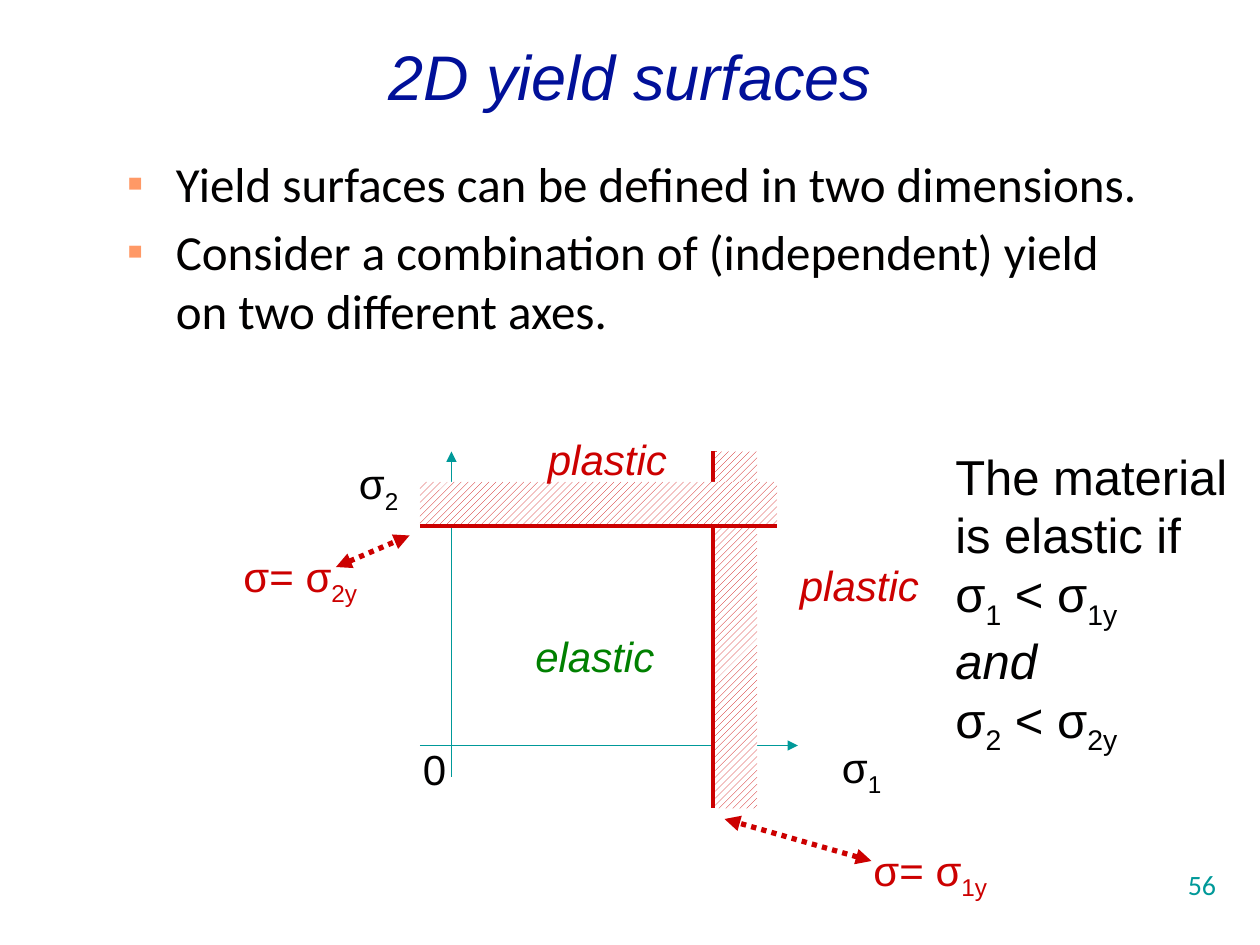
from lxml.etree import SubElement
from pptx import Presentation
from pptx.dml.color import RGBColor
from pptx.enum.dml import MSO_LINE, MSO_PATTERN
from pptx.enum.shapes import MSO_CONNECTOR, MSO_SHAPE
from pptx.enum.text import MSO_ANCHOR, PP_ALIGN
from pptx.oxml.ns import qn
from pptx.util import Inches, Pt

COLS, ROWS = 120, 90  # square cells, twelve to the inch
CELL = Inches(10) / COLS
HUE = {"title": "011099", "ink": "010000", "axis": "009999", "yield": "CC0000",
       "safe": "008000", "bullet": "FF9966", "paper": "FFFFFF"}


def color(name):
    return RGBColor.from_string(HUE[name])


def cells(*nums):
    return [round(n * CELL) for n in nums]


def write(par, runs, size, hue, face="Arial"):
    """Add (text, style) runs; style is "", "sub", "ital" or "break"."""
    for text, style in runs:
        if style == "break":
            par.add_line_break()
            continue
        run = par.add_run()
        run.text = text
        font = run.font
        font.name, font.size = face, Pt(size)
        font.color.rgb = color(hue)
        font.italic = style == "ital"
        if style == "sub":
            run._r.get_or_add_rPr().set("baseline", "-25000")


def text_box(slide, box, wrap=True):
    frame = slide.shapes.add_textbox(*cells(*box)).text_frame
    frame.word_wrap = wrap
    return frame


def label(slide, x, y, width, runs, hue="ink"):
    frame = text_box(slide, (x, y, width, 6))
    write(frame.paragraphs[0], runs, 24, hue)


def line(slide, start, end, hue, width, heads=(), dots=False):
    link = slide.shapes.add_connector(MSO_CONNECTOR.STRAIGHT, *cells(*start, *end))
    link.line.color.rgb = color(hue)
    link.line.width = Pt(width)
    if dots:
        link.line.dash_style = MSO_LINE.ROUND_DOT
    for head in heads:
        SubElement(link.line._get_or_add_ln(), qn(f"a:{head}"), type="triangle")
    SubElement(link._element.spPr, qn("a:effectLst"))


def hatch(slide, *box):
    band = slide.shapes.add_shape(MSO_SHAPE.RECTANGLE, *cells(*box))
    band.shadow.inherit = False
    band.line.fill.background()
    band.fill.patterned()
    band.fill.pattern = MSO_PATTERN.WIDE_UPWARD_DIAGONAL
    band.fill.fore_color.rgb = color("yield")
    band.fill.back_color.rgb = color("paper")


def heading(slide, box):
    title = slide.shapes.title
    title.left, title.top, title.width, title.height = cells(*box)
    frame = title.text_frame
    frame.vertical_anchor = MSO_ANCHOR.MIDDLE
    par = frame.paragraphs[0]
    par.alignment, par.line_spacing = PP_ALIGN.CENTER, 1.2
    write(par, [("2D yield surfaces", "ital")], 36, "title")


def bullets(slide, box, items):
    frame = text_box(slide, box)
    for i, item in enumerate(items):
        par = frame.add_paragraph() if i else frame.paragraphs[0]
        par.space_before = Pt(5.6)
        props = par._p.get_or_add_pPr()
        props.set("marL", str(Inches(0.38)))
        props.set("indent", str(-Inches(0.38)))
        tint = SubElement(props, qn("a:buClr"))
        SubElement(tint, qn("a:srgbClr"), val=HUE["bullet"])
        SubElement(props, qn("a:buSzPct"), val="50000")
        SubElement(props, qn("a:buFont"), typeface="Arial")
        SubElement(props, qn("a:buChar"), char="■")
        write(par, [(item, "")], 28, "ink", "Calibri")


def rule(slide, box):
    """State the condition for elastic behaviour."""
    frame = text_box(slide, box, wrap=False)
    end = ("", "break")

    def limit(axis):
        return [("σ", ""), (axis, "sub"), (" < σ", ""), (axis + "y", "sub")]

    first = [("The material", ""), end, ("is elastic if", ""), end,
             *limit("1"), end, ("and", "ital")]
    write(frame.paragraphs[0], first, 28, "ink")
    write(frame.add_paragraph(), limit("2"), 28, "ink")


def diagram(slide, x, y, side):
    """Draw the yield plot; (x, y) is its top left and side its band length."""
    zero = (x + 3, y + side - 6)
    wall, roof = x + side - 6, y + 7
    band = 4
    line(slide, (zero[0], zero[1] + 3), (zero[0], y), "axis", 0.75, ["tailEnd"])
    line(slide, (x, zero[1]), (x + side + 2, zero[1]), "axis", 0.75, ["tailEnd"])
    label(slide, x - 0.9, zero[1] - 0.8, 6, [("0", "")])
    label(slide, x + side + 5, zero[1] - 1, 8, [("σ", ""), ("1", "sub")])
    label(slide, x - 7, y, 8, [("σ", ""), ("2", "sub")])

    line(slide, (wall, y), (wall, y + side), "yield", 3)
    hatch(slide, wall + 0.1, y, band, side)
    line(slide, (x, roof), (x + side, roof), "yield", 3)
    hatch(slide, x, roof - band - 0.1, side, band)

    for dx, dy, word, hue in [(9.8, 16.5, "elastic", "safe"),
                              (35, 9.7, "plastic", "yield"),
                              (11, -2.3, "plastic", "yield")]:
        label(slide, x + dx, y + dy, 16, [(word, "ital")], hue)

    for dx, dy, axis, start, end in [(42, 36.8, "1y", (43, 39), (29, 35)),
                                     (-18, 8.8, "2y", (-8, 11), (-1, 8))]:
        label(slide, x + dx, y + dy, 15, [("σ= σ", ""), (axis, "sub")], "yield")
        line(slide, (x + start[0], y + start[1]), (x + end[0], y + end[1]),
             "yield", 3, ["headEnd", "tailEnd"], dots=True)


def number(slide, box):
    par = text_box(slide, box).paragraphs[0]
    par.alignment = PP_ALIGN.RIGHT
    write(par, [("56", "")], 16, "axis", "Calibri")


def main():
    deck = Presentation()
    deck.slide_width, deck.slide_height = cells(COLS, ROWS)
    slide = deck.slides.add_slide(deck.slide_layouts[5])
    number(slide, (92, 82, 25, 6))
    heading(slide, (20, 0, 80, 13))
    bullets(slide, (11, 14, 100, 54), [
        "Yield surfaces can be defined in two dimensions.",
        "Consider a combination of (independent) yield on two different axes."])
    rule(slide, (89.8, 41.9, 28.9, 34.3))
    diagram(slide, 40, 43, 34)
    deck.save("out.pptx")


if __name__ == "__main__":
    main()
